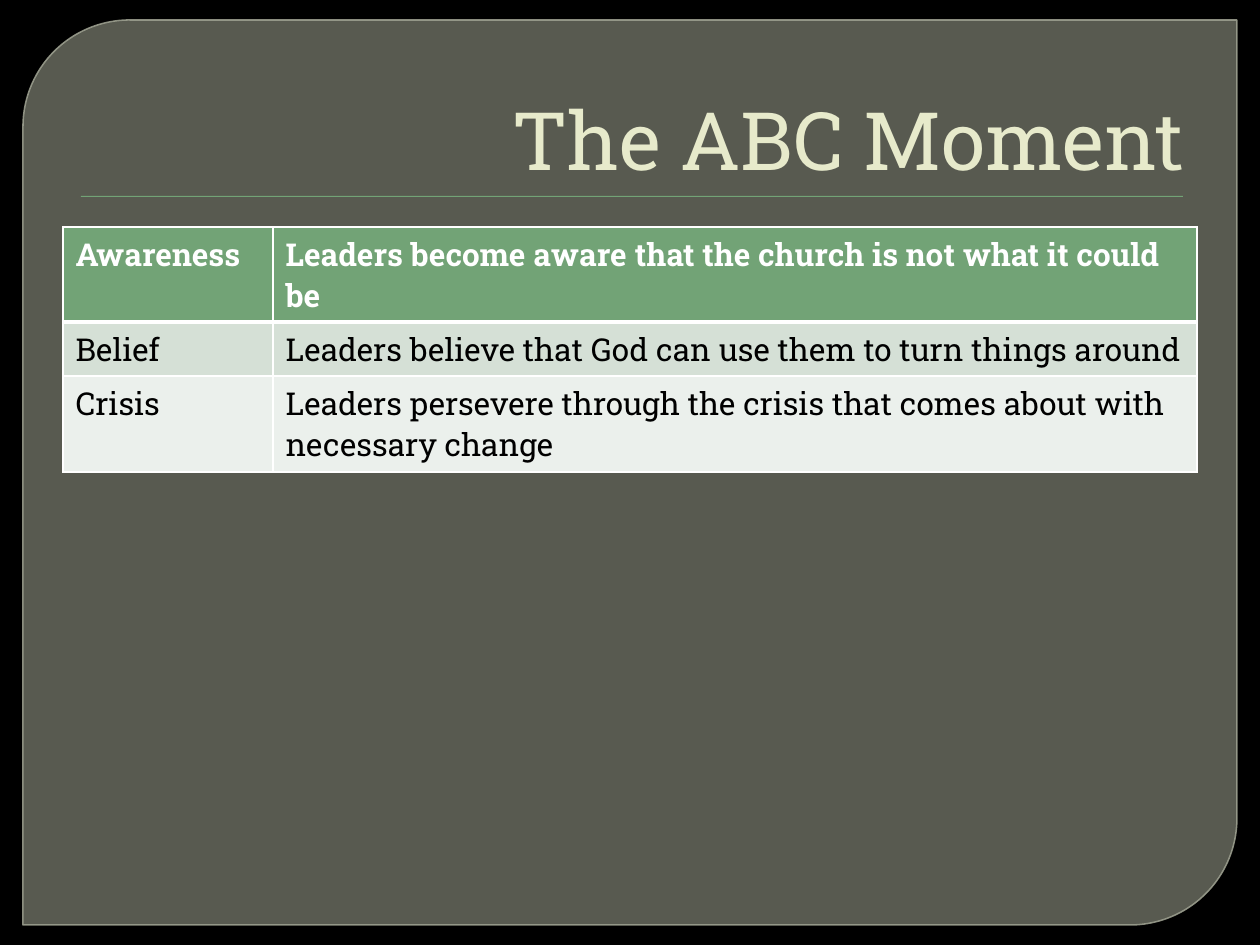
import pptx
import pptx.util
from pptx.dml.color import RGBColor
from pptx.enum.shapes import MSO_SHAPE
from pptx.enum.text import MSO_ANCHOR, PP_ALIGN
from pptx.oxml.ns import qn
from lxml import etree

PX = 914400 // 126
FONT = "Roboto Slab"
BLACK = RGBColor(0x00, 0x00, 0x00)
WHITE = RGBColor(0xFF, 0xFF, 0xFF)
OLIVE = RGBColor(0x88, 0x8B, 0x7B)
EDGE = RGBColor(0x9D, 0xA0, 0x90)
GREEN = RGBColor(0x72, 0xA3, 0x76)
CREAM = RGBColor(0xE7, 0xEA, 0xCB)
MINT = RGBColor(0xD5, 0xE0, 0xD6)
PALE = RGBColor(0xEB, 0xF0, 0xEC)

COLS = [210, 924]
# height, fill, text colour, bold, cell texts
ROWS = [
    (95, GREEN, WHITE, True,
     ["Awareness", "Leaders become aware that the church is not what it could be"]),
    (54, MINT, BLACK, False,
     ["Belief", "Leaders believe that God can use them to turn things around"]),
    (96, PALE, BLACK, False,
     ["Crisis", "Leaders persevere through the crisis that comes about with necessary change"]),
]


def scale(*sizes):
    return [size * PX for size in sizes]


def fade(fill, share):
    """Set the opacity of a solid fill, in percent."""
    tint = fill._xPr.find(qn("a:solidFill"))[0]
    etree.SubElement(tint, qn("a:alpha"), val=str(share * 1000))


def add_shape(slide, kind, box, color):
    shape = slide.shapes.add_shape(kind, *scale(*box))
    shape.shadow.inherit = False
    shape.fill.solid()
    shape.fill.fore_color.rgb = color
    shape.line.fill.background()
    return shape


def add_panel(slide):
    panel = add_shape(slide, MSO_SHAPE.ROUND_2_DIAG_RECTANGLE,
                      (23, 20, 1214, 905), OLIVE)
    panel.adjustments[0] = 0.118
    panel.adjustments[1] = 0
    fade(panel.fill, 65)
    panel.line.width = pptx.util.Pt(0.87)
    panel.line.fill.solid()
    panel.line.color.rgb = EDGE
    fade(panel.line.fill, 88)


def style(para, size, color, bold=False):
    font = para.font
    font.name = FONT
    font.size = pptx.util.Pt(size)
    font.color.rgb = color
    font.bold = bold


def add_title(slide, text):
    frame = slide.shapes.add_textbox(*scale(63, 35, 1134, 158)).text_frame
    frame.word_wrap = True
    frame.vertical_anchor = MSO_ANCHOR.BOTTOM
    para = frame.paragraphs[0]
    para.text = text
    para.alignment = PP_ALIGN.RIGHT
    style(para, 46, CREAM)


def add_border(cell, side, width):
    props = cell._tc.get_or_add_tcPr()
    line = etree.Element(qn("a:ln" + side), w=str(pptx.util.Pt(width)))
    fill = etree.SubElement(line, qn("a:solidFill"))
    etree.SubElement(fill, qn("a:srgbClr"), val=str(WHITE))
    # Borders must come before the cell's fill
    props.find(qn("a:solidFill")).addprevious(line)


def add_table(slide):
    high = sum(row[0] for row in ROWS)
    table = slide.shapes.add_table(
        len(ROWS), len(COLS), *scale(63, 227, sum(COLS), high)).table
    for col, width in zip(table.columns, COLS):
        col.width = width * PX
    for r, (height, fill, color, bold, texts) in enumerate(ROWS):
        table.rows[r].height = height * PX
        for c, text in enumerate(texts):
            cell = table.cell(r, c)
            cell.text = text
            style(cell.text_frame.paragraphs[0], 18, color, bold)
            cell.fill.solid()
            cell.fill.fore_color.rgb = fill
            for side in "LRTB":
                heavy = (r, side) in ((0, "B"), (1, "T"))
                add_border(cell, side, 3 if heavy else 1)


def main():
    deck = pptx.Presentation()
    deck.slide_width, deck.slide_height = scale(1260, 945)
    slide = deck.slides.add_slide(deck.slide_layouts[6])
    slide.background.fill.solid()
    slide.background.fill.fore_color.rgb = BLACK
    add_panel(slide)
    add_shape(slide, MSO_SHAPE.RECTANGLE, (81, 196, 1102, 1), GREEN)
    add_title(slide, "The ABC Moment")
    add_table(slide)
    deck.save("out.pptx")


if __name__ == "__main__":
    main()
